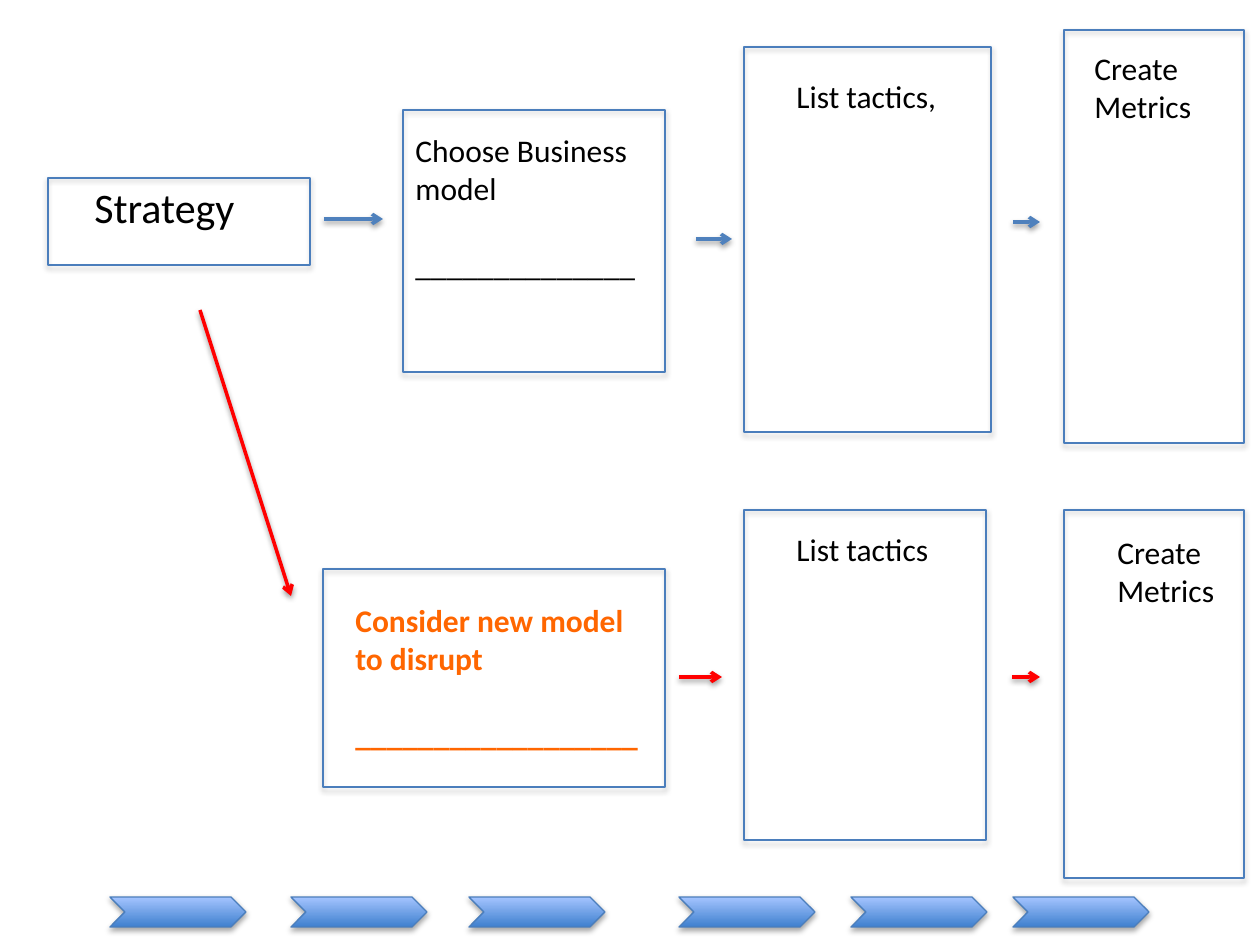
from dataclasses import dataclass

from lxml import etree
from pptx import Presentation
from pptx.dml.color import RGBColor
from pptx.enum.shapes import MSO_CONNECTOR, MSO_SHAPE
from pptx.oxml import parse_xml
from pptx.oxml.ns import nsdecls, qn
from pptx.util import Emu, Pt

RECT, CHEVRON = MSO_SHAPE.RECTANGLE, MSO_SHAPE.CHEVRON
STRAIGHT = MSO_CONNECTOR.STRAIGHT
PX_PER_INCH = 126
BLANK_LAYOUT = 6


@dataclass(frozen=True)
class Theme:
    font: str = "Calibri"
    text: str = "000000"
    accent: str = "FF6600"
    border: str = "4B7EBC"
    arrow: str = "4F81BD"
    disrupt: str = "FF0000"
    gradient: tuple = ("3F80CE", "A4C4FF")
    title_pt: int = 24
    label_pt: int = 18
    rule_gap_pt: int = 22
    border_pt: float = 0.75
    arrow_pt: int = 2


THEME = Theme()


def px(n):
    return Emu(round(n * 914400 / PX_PER_INCH))


def rgb(value):
    return RGBColor.from_string(value)


def add_shadow(s, opacity, distance):
    s._element.spPr.append(parse_xml(
        f'<a:effectLst {nsdecls("a")}>'
        f'<a:outerShdw blurRad="40000" dist="{distance}" dir="5400000" rotWithShape="0">'
        f'<a:srgbClr val="000000"><a:alpha val="{opacity * 1000}"/></a:srgbClr>'
        '</a:outerShdw></a:effectLst>'))


def set_line(s, color, width):
    s.line.color.rgb = rgb(color)
    s.line.width = Pt(width)


def add_outlined(slide, kind, box):
    s = slide.shapes.add_shape(kind, *map(px, box))
    set_line(s, THEME.border, THEME.border_pt)
    add_shadow(s, 35, 23000)
    return s


def add_frame(slide, box):
    add_outlined(slide, RECT, box).fill.background()


def add_chevron(slide, left):
    s = add_outlined(slide, CHEVRON, (left, 897, 136, 30))
    s.fill.gradient()
    s.fill.gradient_angle = 90
    for stop, color in zip(s.fill.gradient_stops, THEME.gradient):
        stop.color.rgb = rgb(color)


def add_arrow(slide, color, ends):
    s = slide.shapes.add_connector(STRAIGHT, *map(px, ends))
    set_line(s, color, THEME.arrow_pt)
    etree.SubElement(s.line._get_or_add_ln(), qn("a:tailEnd"), type="arrow")
    add_shadow(s, 38, 20000)


def add_label(slide, box, lines, size=THEME.label_pt, color=THEME.text, bold=False):
    tf = slide.shapes.add_textbox(*map(px, box)).text_frame
    tf.word_wrap = False
    font = {"name": THEME.font, "size": Pt(size), "bold": bold}
    for i, line in enumerate(lines):
        p = tf.add_paragraph() if i else tf.paragraphs[0]
        if line.startswith("_"):
            p.space_before = Pt(THEME.rule_gap_pt)
        r = p.add_run()
        r.text = line
        for name, value in font.items():
            setattr(r.font, name, value)
        r.font.color.rgb = rgb(color)


def main():
    prs = Presentation()
    prs.slide_width, prs.slide_height = px(1260), px(945)
    slide = prs.slides.add_slide(prs.slide_layouts[BLANK_LAYOUT])

    # Frames: strategy, then the upper and lower paths
    for box in (
        (48, 178, 262, 87),
        (403, 110, 262, 262), (744, 47, 247, 385), (1064, 30, 180, 413),
        (323, 569, 342, 218), (744, 510, 242, 330), (1064, 510, 180, 368),
    ):
        add_frame(slide, box)

    # Timeline chevrons
    for left in (110, 291, 469, 679, 851, 1013):
        add_chevron(slide, left)

    # Arrows: existing path, then disruptive path
    for ends in ((324, 219, 383, 219), (696, 239, 732, 239), (1013, 222, 1040, 222)):
        add_arrow(slide, THEME.arrow, ends)
    for ends in ((200, 310, 291, 596), (679, 677, 722, 677), (1012, 677, 1040, 677)):
        add_arrow(slide, THEME.disrupt, ends)

    # Labels
    metrics = ("Create", "Metrics")
    add_label(slide, (82, 175, 168, 63), ("Strategy",), size=THEME.title_pt)
    add_label(slide, (403, 125, 248, 165), ("Choose Business", "model", "_" * 14))
    add_label(slide, (784, 71, 168, 89), ("List tactics,",))
    add_label(slide, (1082, 43, 123, 89), metrics)
    add_label(slide, (343, 595, 311, 165),
              ("Consider new model", "to disrupt", "_" * 18),
              color=THEME.accent, bold=True)
    add_label(slide, (784, 524, 160, 50), ("List tactics",))
    add_label(slide, (1105, 527, 123, 89), metrics)

    prs.save("out.pptx")


if __name__ == "__main__":
    main()
